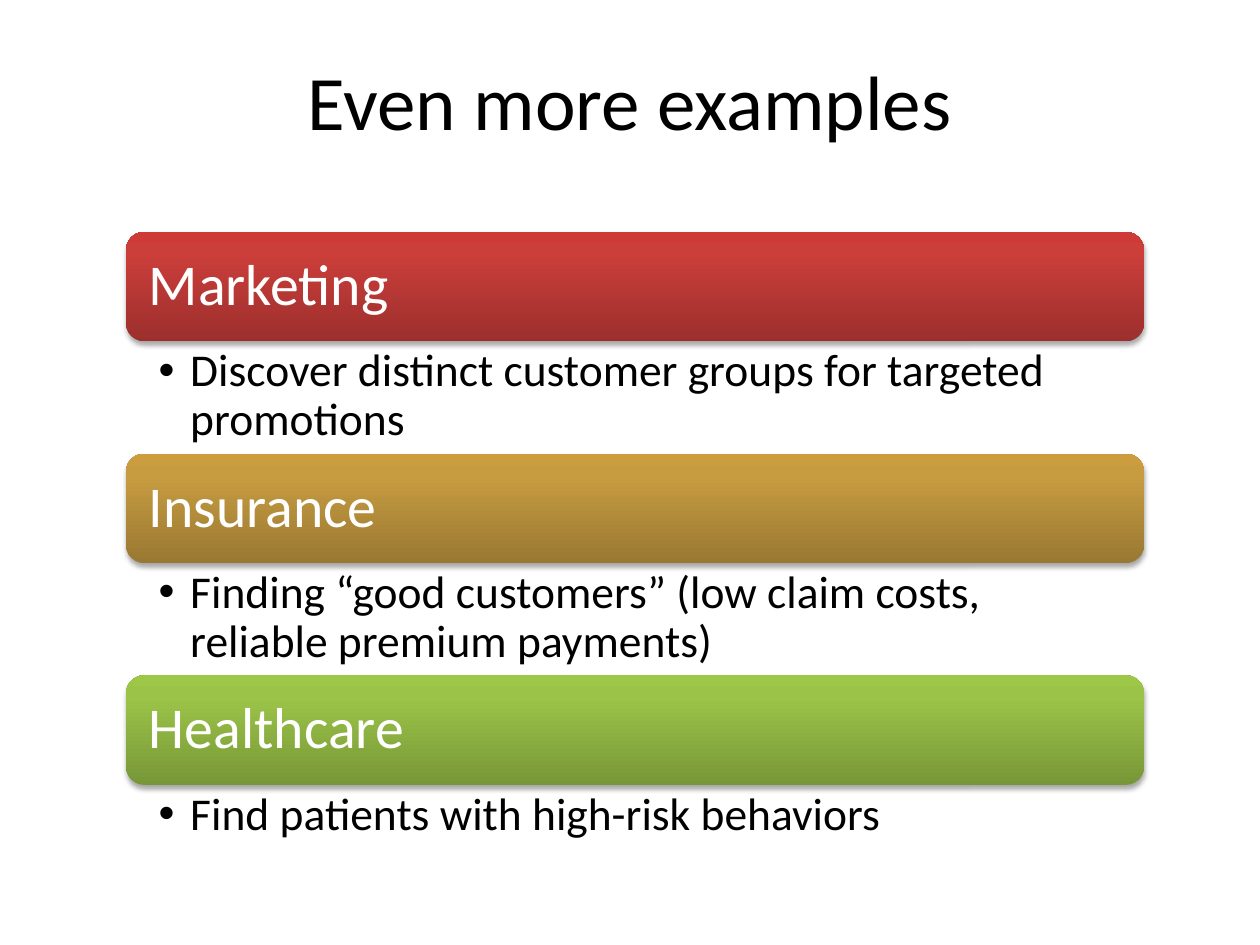
from lxml.etree import SubElement
from pptx import Presentation
from pptx.dml.color import RGBColor
from pptx.enum.shapes import MSO_SHAPE
from pptx.enum.text import MSO_ANCHOR, PP_ALIGN
from pptx.oxml.ns import qn
from pptx.util import Inches, Pt

"""Build the 'Even more examples' slide: three headed sectors with a bullet each."""


def color(hex_string):
    return RGBColor.from_string(hex_string)


def write(paragraph, text, size, hex_string):
    run = paragraph.add_run()
    run.text = text
    run.font.name = "Calibri"
    run.font.size = Pt(size)
    run.font.color.rgb = color(hex_string)


sectors = [
    ("Marketing", "Discover distinct customer groups for targeted promotions",
     ("9C2F2D", "CB3E3A", "CE3B37"), 0.9),
    ("Insurance", "Finding “good customers” (low claim costs, reliable premium payments)",
     ("997832", "C79C41", "CB9D3F"), 0.9),
    ("Healthcare", "Find patients with high-risk behaviors",
     ("779737", "9BC348", "9DC746"), 0.6),
]
left, top, width = 1, 1.84, 8.08
bar_height, pitch = 0.87, 1.76

prs = Presentation()
prs.slide_width, prs.slide_height = Inches(10), Inches(7.5)
slide = prs.slides.add_slide(prs.slide_layouts[5])

title = slide.shapes.title
title.left, title.top = Inches(0.5), Inches(0.17)
title.width, title.height = Inches(9), Inches(1.25)
title.text_frame.vertical_anchor = MSO_ANCHOR.MIDDLE
heading = title.text_frame.paragraphs[0]
heading.alignment = PP_ALIGN.CENTER
write(heading, "Even more examples", 44, "000000")

for index, (sector, example, shades, example_height) in enumerate(sectors):
    bar_top = top + index * pitch
    bar = slide.shapes.add_shape(MSO_SHAPE.ROUNDED_RECTANGLE, Inches(left), Inches(bar_top),
                                 Inches(width), Inches(bar_height))
    bar.line.fill.background()
    bar.fill.gradient()
    bar.fill.gradient_angle = 90
    stops = bar._element.spPr.find(qn("a:gradFill")).find(qn("a:gsLst"))
    for stop in list(stops):
        stops.remove(stop)
    for position, shade in zip((0, 80000, 100000), shades):
        stop = SubElement(stops, qn("a:gs"), pos=str(position))
        SubElement(stop, qn("a:srgbClr"), val=shade)

    bar.shadow.inherit = False
    effects = bar._element.spPr.find(qn("a:effectLst"))
    shadow = SubElement(effects, qn("a:outerShdw"), blurRad=str(Pt(3.1)), dist=str(Pt(1.8)),
                        dir="5400000", rotWithShape="0")
    shadow_color = SubElement(shadow, qn("a:srgbClr"), val="000000")
    SubElement(shadow_color, qn("a:alpha"), val="35000")

    label = bar.text_frame
    label.word_wrap = True
    label.vertical_anchor = MSO_ANCHOR.MIDDLE
    label.margin_left = label.margin_right = Inches(0.14)
    label.margin_top = label.margin_bottom = Inches(0.14)
    label.paragraphs[0].alignment = PP_ALIGN.LEFT
    label.paragraphs[0].line_spacing = 0.9
    write(label.paragraphs[0], sector, 33, "FFFFFF")

    detail = slide.shapes.add_textbox(Inches(left), Inches(bar_top + bar_height),
                                      Inches(width), Inches(example_height)).text_frame
    detail.word_wrap = True
    detail.margin_left = detail.margin_right = Inches(0.26)
    detail.margin_top = detail.margin_bottom = Inches(0.05)
    bullet = detail.paragraphs[0]
    bullet.level = 1
    bullet.line_spacing = 0.9
    properties = bullet._p.get_or_add_pPr()
    properties.set("marL", str(Inches(0.25)))
    properties.set("indent", str(Inches(-0.25)))
    SubElement(properties, qn("a:buFont"), typeface="Arial")
    SubElement(properties, qn("a:buChar"), char="•")
    write(bullet, example, 26, "000000")

prs.save("out.pptx")
